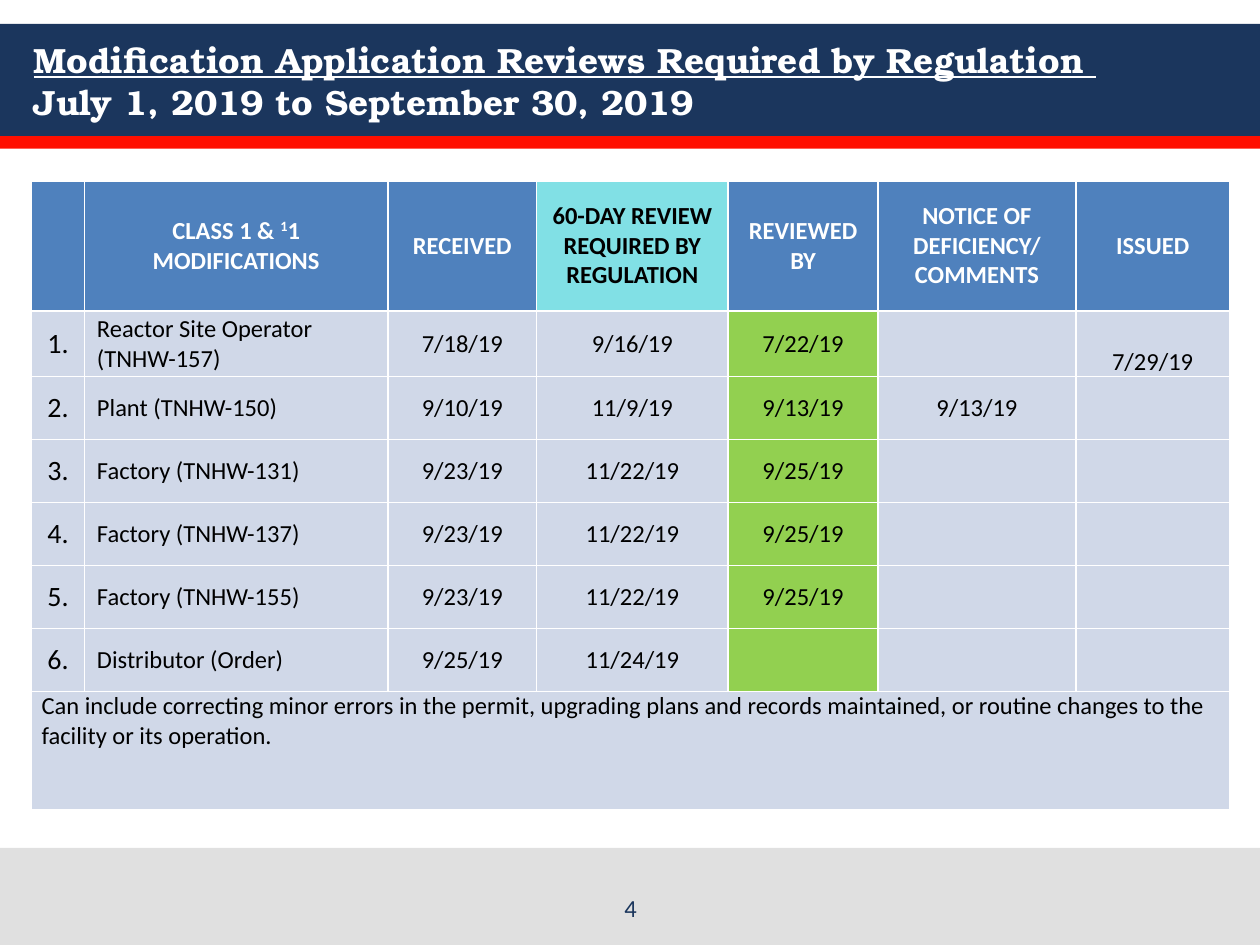
from lxml import etree
from pptx import Presentation
from pptx.dml.color import RGBColor
from pptx.enum.shapes import MSO_SHAPE
from pptx.enum.text import MSO_ANCHOR, PP_ALIGN
from pptx.oxml.ns import qn
from pptx.util import Inches, Pt

RECTANGLE = MSO_SHAPE.RECTANGLE
TOP, MIDDLE, BOTTOM = MSO_ANCHOR.TOP, MSO_ANCHOR.MIDDLE, MSO_ANCHOR.BOTTOM
LEFT, CENTER = PP_ALIGN.LEFT, PP_ALIGN.CENTER

WIDTH, HEIGHT = 10, 7.5
TITLE_FONT, BODY_FONT = "TeX Gyre Bonum", "Calibri"
NAVY, RED, GRAY, WHITE, BLACK = "1B365D", "FF0F00", "E0E0E0", "FFFFFF", "000000"
BLUE, AQUA, PALE, GREEN = "4F81BD", "81E0E5", "D0D8E8", "92D050"

TITLE = ["Modification Application Reviews Required by Regulation ",
         "July 1, 2019 to September 30, 2019"]
BANDS = [(0.19, 0.89, NAVY), (1.08, 0.1, RED), (6.73, 0.77, GRAY)]  # top, height, fill

# Each cell is a list of paragraphs
HEADERS = [
    [], ["CLASS 1 & ^1^1 MODIFICATIONS"], ["RECEIVED"],
    ["60-DAY REVIEW", "REQUIRED BY", "REGULATION"],
    ["REVIEWED BY"], ["NOTICE OF DEFICIENCY/ COMMENTS"], ["ISSUED"],
]
# Facility lines, received, review due, reviewed, notice, issued
REVIEWS = [
    (["Reactor Site Operator", "(TNHW-157)"], "7/18/19", "9/16/19", "7/22/19", "", "7/29/19"),
    (["Plant (TNHW-150)"], "9/10/19", "11/9/19", "9/13/19", "9/13/19", ""),
    (["Factory (TNHW-131)"], "9/23/19", "11/22/19", "9/25/19", "", ""),
    (["Factory (TNHW-137)"], "9/23/19", "11/22/19", "9/25/19", "", ""),
    (["Factory (TNHW-155)"], "9/23/19", "11/22/19", "9/25/19", "", ""),
    (["Distributor (Order)"], "9/25/19", "11/24/19", "", "", ""),
]
NOTE = ("Can include correcting minor errors in the permit, upgrading plans and records "
        "maintained, or routine changes to the facility or its operation.")
COLUMNS = [0.42, 2.41, 1.18, 1.52, 1.19, 1.57, 1.22]
ROWS = [1.04, 0.52] + [0.5] * (len(REVIEWS) - 1) + [0.94]
FACILITY, DUE, REVIEWED, ISSUED = 1, 3, 4, 6


def color(value):
    return RGBColor.from_string(value)


def style(font, size, fill, bold=False, name=BODY_FONT):
    font.name, font.size, font.bold = name, Pt(size), bold
    font.color.rgb = color(fill)


def add_band(slide, top, height, fill):
    band = slide.shapes.add_shape(RECTANGLE, 0, Inches(top), Inches(WIDTH), Inches(height))
    band.shadow.inherit = False
    band.fill.solid()
    band.fill.fore_color.rgb = color(fill)
    band.line.fill.background()


def add_text_box(slide, left, top, width, height, anchor):
    frame = slide.shapes.add_textbox(*map(Inches, (left, top, width, height))).text_frame
    frame.word_wrap = True
    frame.vertical_anchor = anchor
    return frame.paragraphs[0]


def set_borders(cell, top_width):
    properties = cell._tc.get_or_add_tcPr()
    for side, width in (("lnL", 1), ("lnR", 1), ("lnT", top_width), ("lnB", 1)):
        line = etree.SubElement(properties, qn(f"a:{side}"), w=str(Pt(width)))
        fill = etree.SubElement(line, qn("a:solidFill"))
        etree.SubElement(fill, qn("a:srgbClr"), val=WHITE)


def fill_cell(cell, paragraphs, fill, size=14, ink=BLACK, bold=False,
              align=CENTER, anchor=MIDDLE, inset=0.08, top_border=1):
    """Write a cell's paragraphs; text between carets is superscript."""
    set_borders(cell, top_border)
    cell.fill.solid()
    cell.fill.fore_color.rgb = color(fill)
    cell.vertical_anchor = anchor
    cell.margin_left, cell.margin_right = Inches(inset), Inches(0.08)
    cell.margin_top = cell.margin_bottom = 0
    frame = cell.text_frame
    for index, text in enumerate(paragraphs):
        para = frame.add_paragraph() if index else frame.paragraphs[0]
        para.alignment = align
        for part, piece in enumerate(text.split("^")):
            span = para.add_run()
            span.text = piece
            style(span.font, size, ink, bold)
            if part % 2:
                span._r.get_or_add_rPr().set("baseline", "30000")


def add_review_table(slide):
    frame = slide.shapes.add_table(len(ROWS), len(COLUMNS), Inches(0.25), Inches(1.43),
                                   Inches(sum(COLUMNS)), Inches(sum(ROWS)))
    table = frame.table
    for column, width in zip(table.columns, COLUMNS):
        column.width = Inches(width)
    for row, height in zip(table.rows, ROWS):
        row.height = Inches(height)

    for index, lines in enumerate(HEADERS):
        is_due = index == DUE
        fill_cell(table.cell(0, index), lines, AQUA if is_due else BLUE,
                  ink=BLACK if is_due else WHITE, bold=True, top_border=3)

    for number, (facility, *dates) in enumerate(REVIEWS, 1):
        fill_cell(table.cell(number, 0), [f"{number}."], PALE, size=16)
        fill_cell(table.cell(number, FACILITY), facility, PALE, align=LEFT, inset=0.1)
        for index, date in enumerate(dates, FACILITY + 1):
            fill_cell(table.cell(number, index), [date] if date else [],
                      GREEN if index == REVIEWED else PALE,
                      anchor=BOTTOM if index == ISSUED else MIDDLE)

    last = len(ROWS) - 1
    note = table.cell(last, 0)
    note.merge(table.cell(last, len(COLUMNS) - 1))
    fill_cell(note, [NOTE], PALE, align=LEFT, anchor=TOP)


def main():
    deck = Presentation()
    deck.slide_width, deck.slide_height = Inches(WIDTH), Inches(HEIGHT)
    slide = deck.slides.add_slide(deck.slide_layouts[6])
    for band in BANDS:
        add_band(slide, *band)

    title = add_text_box(slide, 0.17, 0.19, 9.67, 0.9, MIDDLE)
    for index, text in enumerate(TITLE):
        if index:
            title.add_line_break()
        span = title.add_run()
        span.text = text
        style(span.font, 20, WHITE, bold=True, name=TITLE_FONT)
        span.font.underline = index == 0

    add_review_table(slide)

    page_number = add_text_box(slide, 3.42, 6.97, 3.17, 0.4, BOTTOM)
    page_number.alignment = CENTER
    span = page_number.add_run()
    span.text = "4"
    style(span.font, 14, NAVY)
    deck.save("out.pptx")


if __name__ == "__main__":
    main()
